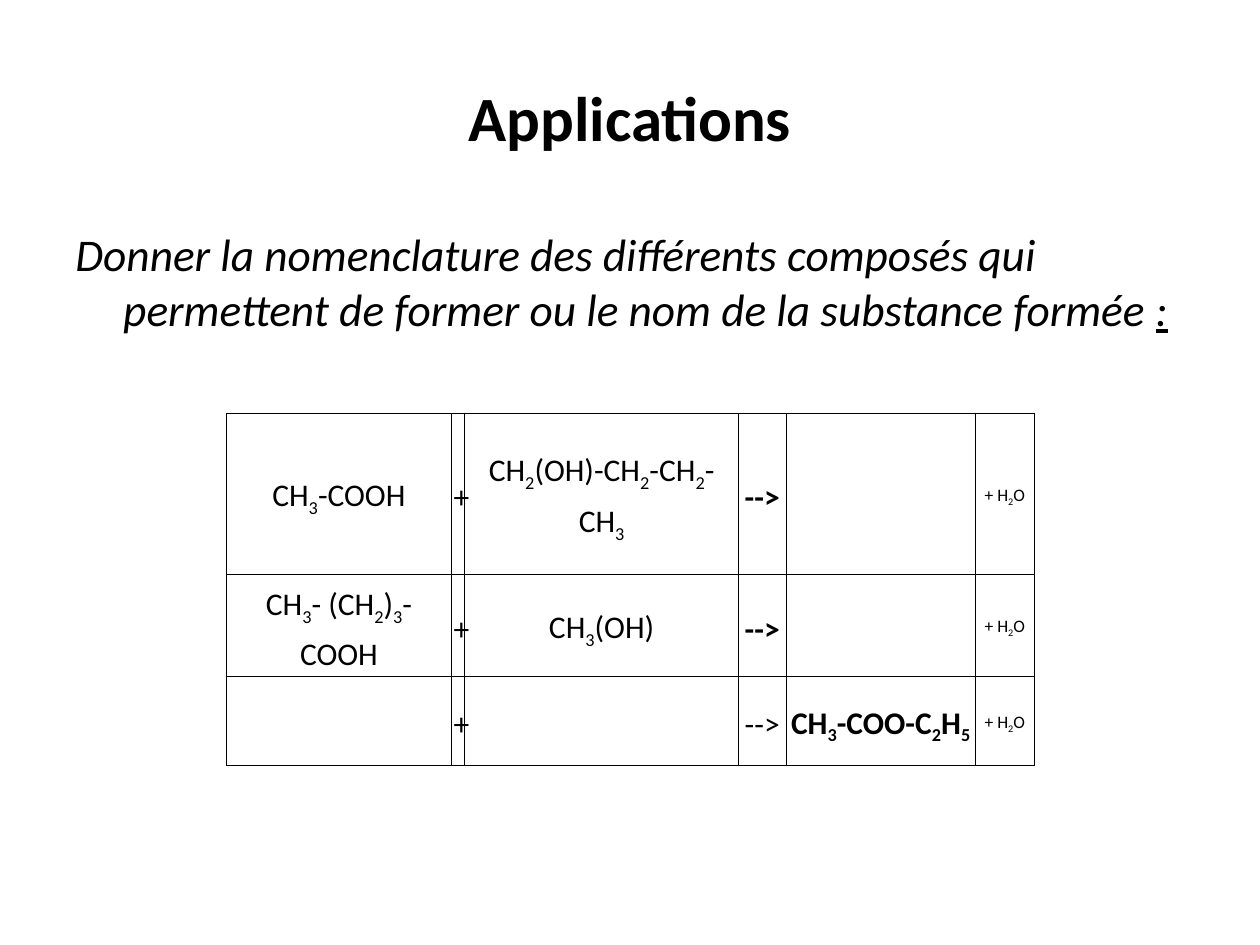
from lxml.etree import SubElement
from pptx import Presentation
from pptx.dml.color import RGBColor
from pptx.enum.text import MSO_ANCHOR, PP_ALIGN
from pptx.oxml.ns import qn
from pptx.util import Inches, Pt

FONT = "Calibri"
BLACK = "000000"
TITLE = "Applications"
QUESTION = ("Donner la nomenclature des différents composés qui permettent "
            "de former ou le nom de la substance formée ")

# In formulas, "_" puts the next character in subscript.
WATER = "+ H_2O"
REACTIONS = [
    ["CH_3-COOH", "+", "CH_2(OH)-CH_2-CH_2-CH_3", "-->", "", WATER],
    ["CH_3- (CH_2)_3-COOH", "+", "CH_3(OH)", "-->", "", WATER],
    ["", "+", "", "-->", "CH_3-COO-C_2H_5", WATER],
]
BOLD_CELLS = {(0, 3), (1, 3), (2, 4)}
COLUMN_WIDTHS = [1.78, 0.11, 2.17, 0.38, 1.5, 0.47]
ROW_HEIGHTS = [1.28, 0.71, 0.71]
TABLE_LEFT, TABLE_TOP = 1.8, 3.28
MARGIN = 0.5


def color(hex_string):
    return RGBColor.from_string(hex_string)


def add_run(paragraph, text, size=18, bold=False, italic=False,
            underline=False, subscript=False):
    run = paragraph.add_run()
    run.text = text
    font = run.font
    font.name, font.size = FONT, Pt(size)
    font.bold, font.italic, font.underline = bold, italic, underline
    font.color.rgb = color(BLACK)
    if subscript:
        run._r.get_or_add_rPr().set("baseline", "-25000")


def add_formula(paragraph, formula, **text_format):
    first, *rest = formula.split("_")
    add_run(paragraph, first, **text_format)
    for part in rest:
        add_run(paragraph, part[0], subscript=True, **text_format)
        if part[1:]:
            add_run(paragraph, part[1:], **text_format)


def add_text_box(slide, top, height, anchor):
    box = slide.shapes.add_textbox(
        Inches(MARGIN), Inches(top), Inches(10 - 2 * MARGIN), Inches(height))
    box.text_frame.word_wrap = True
    box.text_frame.vertical_anchor = anchor
    return box.text_frame.paragraphs[0]


def set_borders(cell):
    properties = cell._tc.get_or_add_tcPr()
    for position, side in enumerate(("lnL", "lnR", "lnT", "lnB")):
        line = SubElement(properties, qn(f"a:{side}"), w=str(Pt(0.75)))
        fill = SubElement(line, qn("a:solidFill"))
        SubElement(fill, qn("a:srgbClr"), val=BLACK)
        properties.insert(position, line)


def add_reaction_table(slide):
    table = slide.shapes.add_table(
        len(ROW_HEIGHTS), len(COLUMN_WIDTHS),
        Inches(TABLE_LEFT), Inches(TABLE_TOP),
        Inches(sum(COLUMN_WIDTHS)), Inches(sum(ROW_HEIGHTS))).table
    table.first_row = table.horz_banding = False
    for column, width in zip(table.columns, COLUMN_WIDTHS):
        column.width = Inches(width)
    for row, height in zip(table.rows, ROW_HEIGHTS):
        row.height = Inches(height)

    for row_index, formulas in enumerate(REACTIONS):
        for column_index, formula in enumerate(formulas):
            cell = table.cell(row_index, column_index)
            cell.fill.background()
            set_borders(cell)
            cell.vertical_anchor = MSO_ANCHOR.MIDDLE
            cell.margin_left = cell.margin_right = Inches(0.02)
            cell.margin_top = cell.margin_bottom = Inches(0.02)
            if formula:
                paragraph = cell.text_frame.paragraphs[0]
                paragraph.alignment = PP_ALIGN.CENTER
                paragraph.line_spacing = 1.2
                add_formula(paragraph, formula,
                            size=10 if formula == WATER else 18,
                            bold=(row_index, column_index) in BOLD_CELLS)


def main():
    presentation = Presentation()
    presentation.slide_width, presentation.slide_height = Inches(10), Inches(7.5)
    slide = presentation.slides.add_slide(presentation.slide_layouts[6])

    title = add_text_box(slide, 0.3, 1.25, MSO_ANCHOR.MIDDLE)
    title.alignment = PP_ALIGN.CENTER
    add_run(title, TITLE, size=36, bold=True)

    question = add_text_box(slide, 1.75, 1.06, MSO_ANCHOR.TOP)
    properties = question._p.get_or_add_pPr()
    properties.set("marL", str(Inches(0.38)))
    properties.set("indent", str(Inches(-0.38)))
    question.space_before = Pt(5)
    add_run(question, QUESTION, size=25.9, italic=True)
    add_run(question, ":", size=25.9, italic=True, underline=True)

    add_reaction_table(slide)
    presentation.save("out.pptx")


if __name__ == "__main__":
    main()
